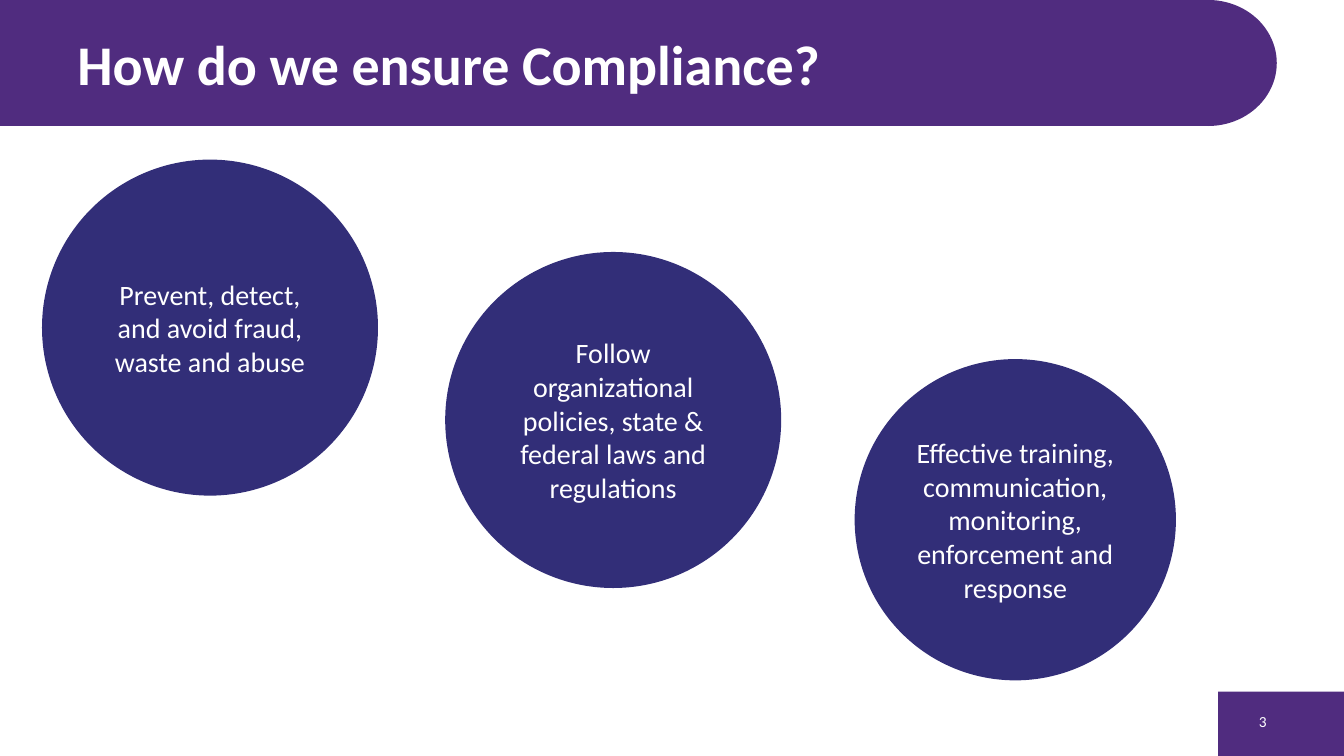
from pptx import Presentation
from pptx.dml.color import RGBColor
from pptx.enum.shapes import MSO_SHAPE
from pptx.enum.text import MSO_ANCHOR, MSO_AUTO_SIZE, PP_ALIGN
from pptx.util import Pt

COLORS = {"band": "502C7F", "circle": "322E78", "text": "FFFFFF"}
FONT = "Calibri"
CIRCLES = [
    (30, 114, 240, "Prevent, detect, and avoid fraud, waste and abuse"),
    (318, 180, 240, "Follow organizational policies, state & federal laws and regulations"),
    (610.5, 256.5, 229.5, "Effective training, communication, monitoring, enforcement and response"),
]


def add_filled_shape(slide, kind, left, top, width, height, color):
    """Add a flat shape without an outline or shadow."""
    shape = slide.shapes.add_shape(kind, Pt(left), Pt(top), Pt(width), Pt(height))
    shape.shadow.inherit = False
    shape.fill.solid()
    shape.fill.fore_color.rgb = RGBColor.from_string(COLORS[color])
    shape.line.fill.background()
    return shape


def write_text(shape, text, size, alignment, bold=False):
    """Write one vertically centred white paragraph into a shape."""
    frame = shape.text_frame
    frame.word_wrap = True
    frame.auto_size = MSO_AUTO_SIZE.NONE
    frame.vertical_anchor = MSO_ANCHOR.MIDDLE
    frame.text = text
    paragraph = frame.paragraphs[0]
    paragraph.alignment = alignment
    paragraph.font.name = FONT
    paragraph.font.size = Pt(size)
    paragraph.font.bold = bold
    paragraph.font.color.rgb = RGBColor.from_string(COLORS["text"])


def add_header(slide, left, top, width, height):
    """Place the rounded title band and the title upon it."""
    cap_width = 98
    cap_left = left + width - cap_width
    add_filled_shape(slide, MSO_SHAPE.RECTANGLE, left, top,
                     cap_left + cap_width / 2 - left, height, "band")
    add_filled_shape(slide, MSO_SHAPE.OVAL, cap_left, top, cap_width, height, "band")
    title = slide.shapes.title
    title.left, title.top = Pt(left + 48), Pt(top + 6)
    title.width, title.height = Pt(720), Pt(height - 12)
    write_text(title, "How do we ensure Compliance?", 40, PP_ALIGN.LEFT, bold=True)
    slide.shapes._spTree.append(title._element)


def add_page_number(slide, left, top, width, height):
    """Place the corner block with the page number."""
    add_filled_shape(slide, MSO_SHAPE.RECTANGLE, left, top, width, height, "band")
    number = slide.shapes.add_textbox(Pt(left + 6), Pt(top + 6.5), Pt(36), Pt(29))
    write_text(number, "3", 11, PP_ALIGN.RIGHT)


def add_circle(slide, left, top, diameter, text):
    """Place one circle with its centred statement."""
    circle = add_filled_shape(slide, MSO_SHAPE.OVAL, left, top, diameter, diameter, "circle")
    write_text(circle, text, 20, PP_ALIGN.CENTER)


def main():
    """Build and save the compliance slide."""
    presentation = Presentation()
    presentation.slide_width, presentation.slide_height = Pt(960), Pt(540)
    slide = presentation.slides.add_slide(presentation.slide_layouts[5])
    add_header(slide, 0, 0, 912, 90)
    add_page_number(slide, 870, 494, 90, 46)
    for left, top, diameter, text in CIRCLES:
        add_circle(slide, left, top, diameter, text)
    presentation.save("out.pptx")


if __name__ == "__main__":
    main()
